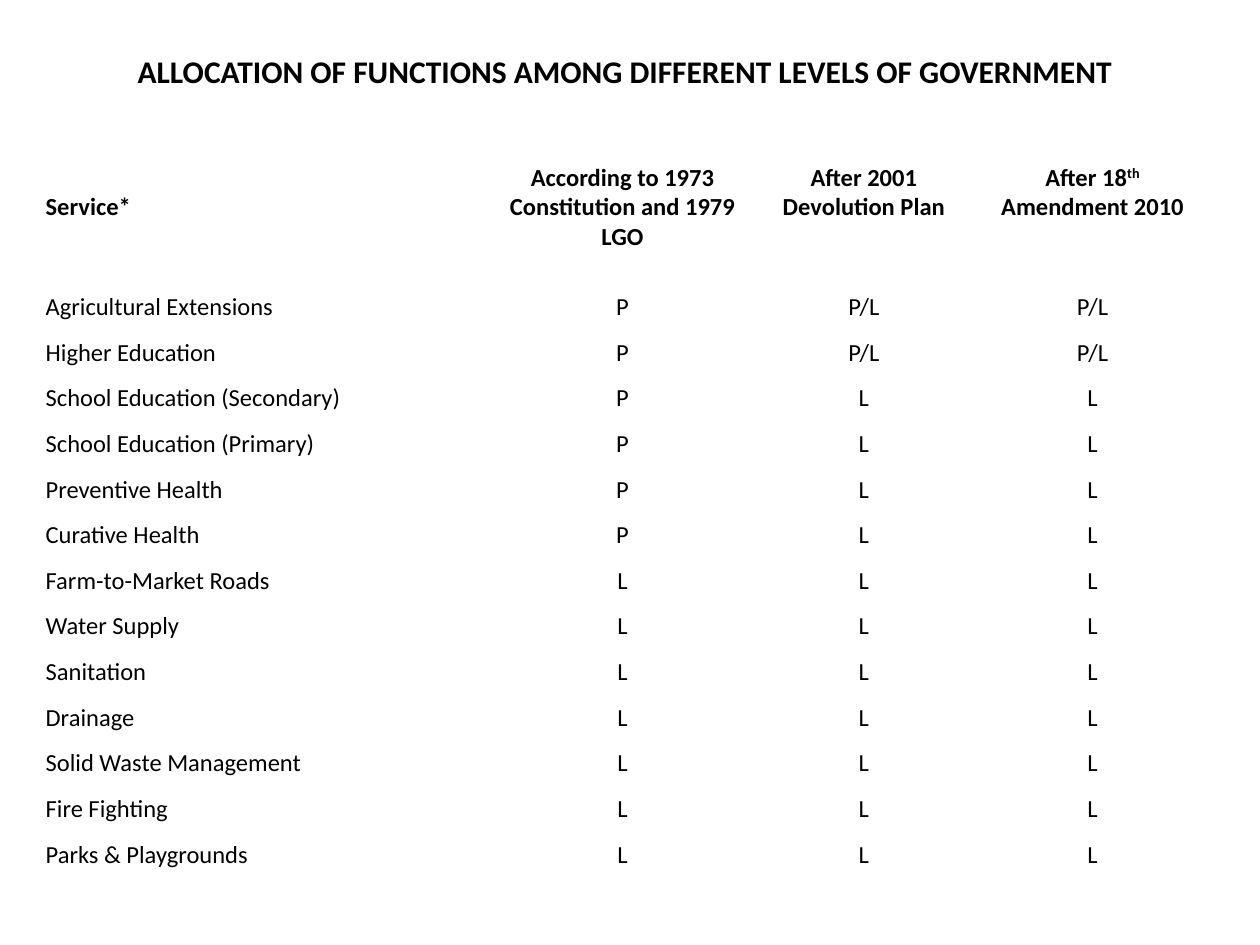
from pptx import Presentation
from pptx.dml.color import RGBColor
from pptx.enum.text import PP_ALIGN
from pptx.util import Cm, Pt

COLORS = {"text": "000000"}
TITLE = "ALLOCATION OF FUNCTIONS AMONG DIFFERENT LEVELS OF GOVERNMENT"
HEADINGS = [
    ["Service*"],
    ["According to 1973 Constitution and 1979 LGO"],
    ["After 2001 Devolution Plan"],
    ["After 18", "^th", " Amendment 2010"],
]
SERVICES = [
    ("Agricultural Extensions", "P", "P/L", "P/L"),
    ("Higher Education", "P", "P/L", "P/L"),
    ("School Education (Secondary)", "P", "L", "L"),
    ("School Education (Primary)", "P", "L", "L"),
    ("Preventive Health", "P", "L", "L"),
    ("Curative Health", "P", "L", "L"),
    ("Farm-to-Market Roads", "L", "L", "L"),
    ("Water Supply", "L", "L", "L"),
    ("Sanitation", "L", "L", "L"),
    ("Drainage", "L", "L", "L"),
    ("Solid Waste Management", "L", "L", "L"),
    ("Fire Fighting", "L", "L", "L"),
    ("Parks & Playgrounds", "L", "L", "L"),
]
COLUMN_WIDTHS = [9.12, 5.18, 4.55, 4.67]
ROW_HEIGHTS = [2.21, 2.31] + [0.92] * len(SERVICES)


def write_text(cell, parts, size=14, bold=False, align=PP_ALIGN.CENTER,
               line_spacing=None, font="Calibri", color="text"):
    """Write the parts as runs; a part that starts with ^ is superscript."""
    paragraph = cell.text_frame.paragraphs[0]
    paragraph.alignment = align
    paragraph.line_spacing = line_spacing
    for part in parts:
        run = paragraph.add_run()
        run.text = part.removeprefix("^")
        run.font.name = font
        run.font.size = Pt(size)
        run.font.bold = bold
        run.font.color.rgb = RGBColor.from_string(COLORS[color])
        if part.startswith("^"):
            run.font._element.set("baseline", "30000")


class SlideBuilder:
    side_margin = Cm(0.08)

    def __init__(self, slide):
        self.slide = slide

    def add_plain_table(self, left, top, widths, heights):
        """Add a table without fills or banding."""
        frame = self.slide.shapes.add_table(
            len(heights), len(widths), Cm(left), Cm(top),
            Cm(sum(widths)), Cm(sum(heights)))
        table = frame.table
        table.first_row = table.horz_banding = False
        for column, width in zip(table.columns, widths):
            column.width = Cm(width)
        for row, height in zip(table.rows, heights):
            row.height = Cm(height)
        for cell in table.iter_cells():
            cell.fill.background()
            cell.margin_left = cell.margin_right = self.side_margin
            cell.margin_top = cell.margin_bottom = 0
        return table

    def add_functions_table(self):
        table = self.add_plain_table(0.84, 1.07, COLUMN_WIDTHS, ROW_HEIGHTS)
        title_cell = table.cell(0, 0)
        title_cell.merge(table.cell(0, len(COLUMN_WIDTHS) - 1))
        write_text(title_cell, [TITLE], size=18, bold=True)

        for column, parts in enumerate(HEADINGS):
            align = PP_ALIGN.CENTER if column else PP_ALIGN.LEFT
            write_text(table.cell(1, column), parts, bold=True, align=align)
        # Lower the first heading to the second line of its neighbours
        table.cell(1, 0).margin_top = Cm(0.6)

        for row, values in enumerate(SERVICES, start=2):
            for column, value in enumerate(values):
                align = PP_ALIGN.CENTER if column else PP_ALIGN.JUSTIFY
                write_text(table.cell(row, column), [value], align=align,
                           line_spacing=1.5)


def main():
    presentation = Presentation()
    presentation.slide_width = Cm(25.4)
    presentation.slide_height = Cm(19.05)
    blank_layout = presentation.slide_layouts[6]
    builder = SlideBuilder(presentation.slides.add_slide(blank_layout))
    builder.add_functions_table()
    presentation.save("out.pptx")


if __name__ == "__main__":
    main()
